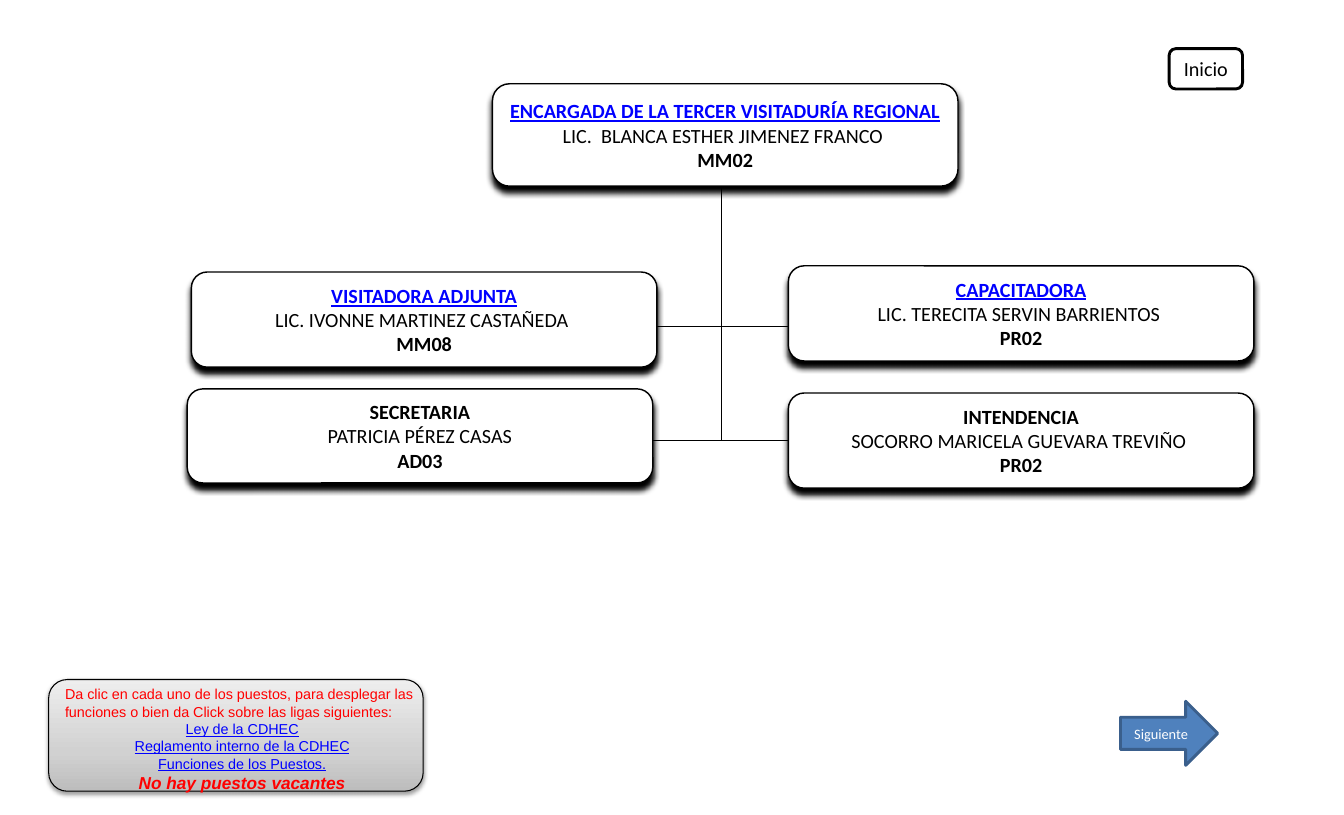
from pptx import Presentation
from pptx import util as u
from pptx.dml import color as clr
from pptx.enum import shapes, text
from pptx.oxml import parse_xml
from pptx.oxml.ns import nsdecls, qn
from copy import deepcopy

INK = {"black": "000000", "white": "FFFFFF", "link": "0000FF", "red": "FF0000",
       "arrow": "4F81BD", "edge": "3A5F8C"}
SHADES = [(0, "BDBDBD"), (0.35, "D1D1D1"), (1, "EEEEEE")]

# Posts: left, top, height, title colour, lines
POSTS = {
    "head": (4.76, 0.81, 0.99, "link", ["ENCARGADA DE LA TERCER VISITADURÍA REGIONAL",
             "LIC.  BLANCA ESTHER JIMENEZ FRANCO ", "MM02"]),
    "deputy": (1.85, 2.63, 0.92, "link", ["VISITADORA ADJUNTA",
               "LIC. IVONNE MARTINEZ CASTAÑEDA ", "MM08"]),
    "clerk": (1.81, 3.76, 0.91, "black", ["SECRETARIA", "PATRICIA PÉREZ CASAS", "AD03"]),
    "trainer": (7.62, 2.57, 0.92, "link", ["CAPACITADORA",
                "LIC. TERECITA SERVIN BARRIENTOS ", "PR02"]),
    "cleaner": (7.62, 3.8, 0.92, "black", ["INTENDENCIA",
                "SOCORRO MARICELA GUEVARA TREVIÑO ", "PR02"]),
}
WIDE = 4.5
TRUNK, ROWS = 6.97, (3.16, 4.26)

GUIDE = ("Da clic en cada uno de los puestos, para desplegar las funciones "
         "o bien da Click sobre las ligas siguientes:")
LINKS = ["Ley de la CDHEC", "Reglamento interno de la CDHEC", "Funciones de los Puestos."]
STATUS = "No hay puestos vacantes"

deck = Presentation()
deck.slide_width, deck.slide_height = u.Inches(12.99), u.Inches(7.88)
slide = deck.slides.add_slide(deck.slide_layouts[6])
parts = slide.shapes


def rgb(name):
    return clr.RGBColor.from_string(INK[name])


def style(para, size, face, ink, bold=False, under=False, slant=False, align="CENTER"):
    para.alignment = getattr(text.PP_ALIGN, align)
    for run in para.runs:
        font = run.font
        font.size, font.name = u.Pt(size), face
        font.bold, font.italic, font.underline = bold, slant, under
        font.color.rgb = rgb(ink)


def shape(kind, box, fill, line, width):
    item = parts.add_shape(kind, *map(u.Inches, box))
    item.shadow.inherit = False
    item.fill.solid()
    item.fill.fore_color.rgb = rgb(fill)
    item.line.color.rgb = rgb(line)
    item.line.width = u.Pt(width)
    item.text_frame.vertical_anchor = text.MSO_ANCHOR.MIDDLE
    return item


def shade(item, alpha, blur, dist):
    item._element.spPr.find(qn("a:effectLst")).append(parse_xml(
        f'<a:outerShdw {nsdecls("a")} blurRad="{u.Pt(blur)}" dist="{u.Pt(dist)}" '
        f'dir="5400000" rotWithShape="0"><a:srgbClr val="{INK["black"]}">'
        f'<a:alpha val="{alpha * 1000}"/></a:srgbClr></a:outerShdw>'))


def link(x1, y1, x2, y2):
    line = parts.add_connector(shapes.MSO_CONNECTOR.STRAIGHT,
                               *map(u.Inches, (x1, y1, x2, y2)))
    line.line.color.rgb = rgb("black")
    line.line.width = u.Pt(0.75)
    line._element.spPr.append(parse_xml(f'<a:effectLst {nsdecls("a")}/>'))
    return line


ROUND = shapes.MSO_SHAPE.ROUNDED_RECTANGLE

# Post boxes
boxes = {}
for key, (left, top, high, ink, lines) in POSTS.items():
    box = boxes[key] = shape(ROUND, (left, top, WIDE, high), "white", "black", 1)
    shade(box, 100, 4, 4)
    frame = box.text_frame
    frame.word_wrap = False
    frame.margin_left = frame.margin_right = u.Inches(0.17)
    frame.margin_top = frame.margin_bottom = u.Inches(0.09)
    frame.text = "\n".join(lines)
    title, name, code = frame.paragraphs
    style(title, 14, "Calibri", ink, bold=True, under=ink == "link")
    style(name, 14, "Calibri", "black")
    style(code, 14, "Calibri", "black", bold=True)

# Trunk and branches
link(TRUNK, POSTS["head"][1] + POSTS["head"][2], TRUNK, ROWS[1])
for y, west, east in zip(ROWS, ("deputy", "clerk"), ("trainer", "cleaner")):
    branch = link(POSTS[west][0] + WIDE, y, POSTS[east][0], y)
branch.end_connect(boxes["cleaner"], 1)

# Navigation buttons
for kind, box, fill, line, label, size, ink in [
        (ROUND, (11.3, 0.47, 0.71, 0.39), "white", "black", "Inicio", 14, "black"),
        (shapes.MSO_SHAPE.RIGHT_ARROW, (10.83, 6.78, 0.94, 0.62), "arrow", "edge",
         "Siguiente", 10, "white")]:
    button = shape(kind, box, fill, line, 2)
    button.text_frame.text = label
    style(button.text_frame.paragraphs[0], size, "Calibri", ink)

# Shaded panel
panel = shape(ROUND, (0.47, 6.57, 3.62, 1.08), "white", "black", 0.75)
shade(panel, 38, 3.1, 1.6)
panel.fill.gradient()
panel.fill.gradient_angle = 90
stops = panel._element.spPr.find(qn("a:gradFill")).find(qn("a:gsLst"))
stops.insert(1, deepcopy(stops[0]))
for stop, (place, tone) in zip(panel.fill.gradient_stops, SHADES):
    stop.position = place
    stop.color.rgb = clr.RGBColor.from_string(tone)

# Guide text
note = parts.add_textbox(*map(u.Inches, (0.53, 6.58, 3.62, 1.14))).text_frame
note.word_wrap = True
note.text = "\n".join([GUIDE, *LINKS, STATUS])
first, *middle, last = note.paragraphs
style(first, 10, "Arial", "red", align="LEFT")
for para in middle:
    style(para, 10, "Arial", "link", under=True)
style(last, 12, "Arial", "red", bold=True, slant=True)

deck.save("out.pptx")
